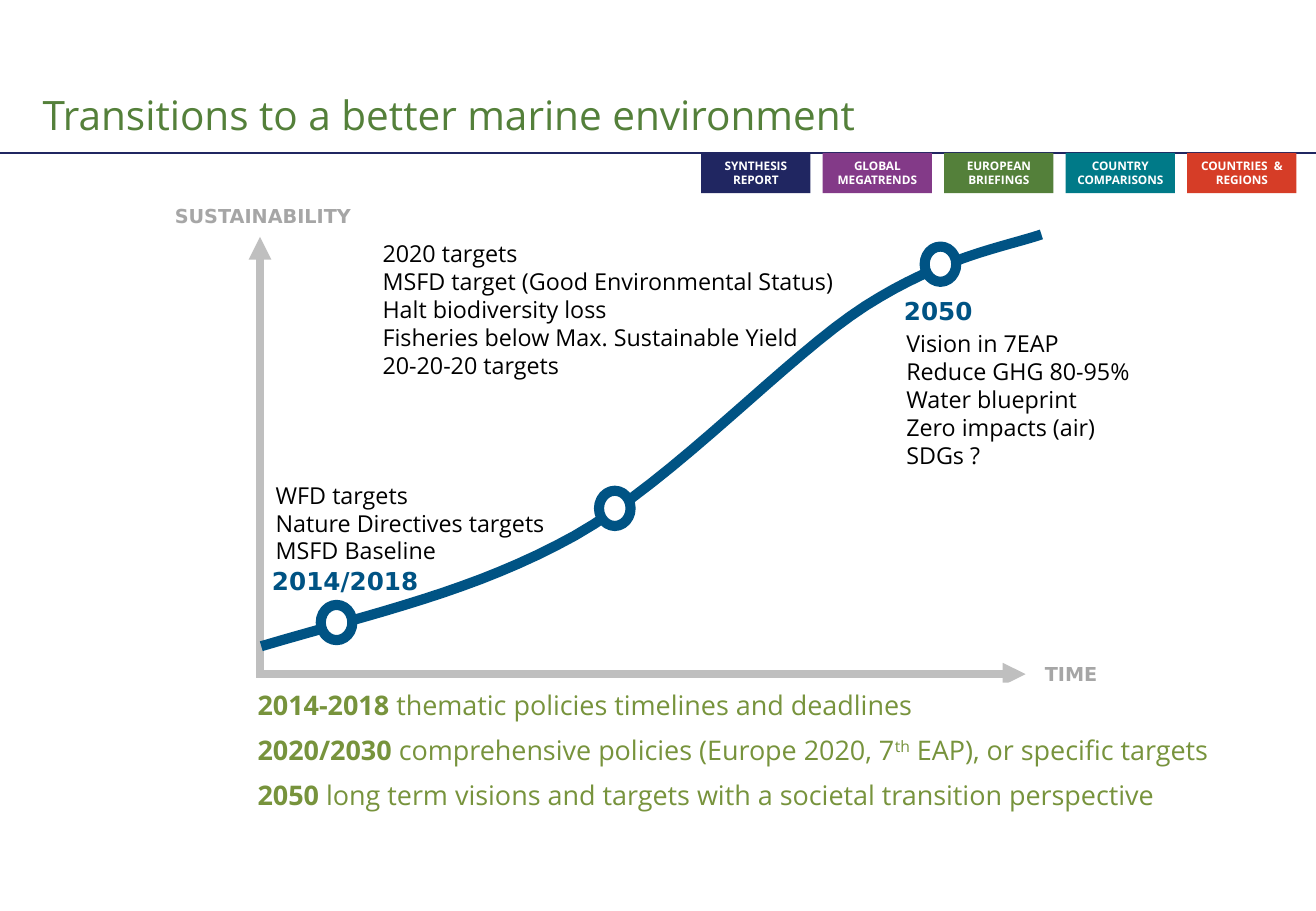
from lxml.etree import SubElement
from pptx import Presentation
from pptx.dml.color import RGBColor
from pptx.enum.shapes import MSO_CONNECTOR as Connector, MSO_SHAPE as Shape
from pptx.enum.text import MSO_ANCHOR as Anchor, PP_ALIGN as Align
from pptx.oxml.ns import qn
from pptx.util import Inches, Pt

GREEN, OLIVE, NAVY, BLUE = "54803A", "77933C", "202661", "005384"
AXIS, LABEL, WHITE, BLACK = "BFBFBF", "A6A6A6", "FFFFFF", "000000"


def color(value):
    """Turn a hex string into a colour."""
    return RGBColor.from_string(value)


class Slide:
    """Hold the style and the current page."""

    sans, label_font = "Open Sans", "DejaVu Sans"

    def __init__(self, deck):
        """Add a title and content page."""
        self.page = deck.slides.add_slide(deck.slide_layouts[1])
        self.shapes = self.page.shapes

    def place(self, box, left, top, width, height):
        """Position a placeholder."""
        box.left, box.top = Inches(left), Inches(top)
        box.width, box.height = Inches(width), Inches(height)

    def style(self, span, size, ink, bold=False, font=sans):
        """Format one run."""
        span.font.name, span.font.size, span.font.bold = font, Pt(size), bold
        span.font.color.rgb = color(ink)

    def title(self, text):
        """Fill the title placeholder."""
        box = self.shapes.title
        self.place(box, 0.25, 0.69, 9.93, 0.5)
        box.text_frame.text = text
        box.text_frame.vertical_anchor = Anchor.BOTTOM
        para = box.text_frame.paragraphs[0]
        para.alignment = Align.LEFT
        self.style(para.runs[0], 24, GREEN)

    def body(self, rows):
        """Fill the body placeholder and bring it to the front."""
        box = self.page.placeholders[1]
        self.place(box, 0.25, 5.62, 10.34, 1.11)
        self.shapes.element.append(box.element)
        box.fill.solid()
        box.fill.fore_color.rgb = color(WHITE)
        frame = box.text_frame
        for index, row in enumerate(rows):
            para = frame.add_paragraph() if index else frame.paragraphs[0]
            para.space_before, para.space_after = Pt(0), Pt(7.3)
            properties = para._p.get_or_add_pPr()
            properties.set("marL", str(Inches(1.77)))
            properties.set("indent", "0")
            SubElement(properties, qn("a:buNone"))
            for position, text in enumerate(row):
                span = para.add_run()
                span.text = text
                self.style(span, 16, OLIVE, bold=position == 0)
                if text == "th":
                    span.font._element.set("baseline", "30000")

    def text(self, left, top, width, height, text, size=13.8, ink=BLACK,
             bold=False, font=sans):
        """Add a text box with one paragraph per line."""
        box = self.shapes.add_textbox(*map(Inches, (left, top, width, height)))
        box.text_frame.word_wrap = True
        box.text_frame.text = text
        for para in box.text_frame.paragraphs:
            self.style(para.runs[0], size, ink, bold, font)

    def label(self, left, top, width, height, text, size, ink):
        """Add a bold label."""
        self.text(left, top, width, height, text, size, ink, True, self.label_font)

    def shape(self, kind, left, top, width, height, fill, ink=None):
        """Add a filled shape, outlined if a line colour is given."""
        shape = self.shapes.add_shape(kind, *map(Inches, (left, top, width, height)))
        shape.shadow.inherit = False
        shape.fill.solid()
        shape.fill.fore_color.rgb = color(fill)
        if ink:
            shape.line.color.rgb, shape.line.width = color(ink), Pt(6)
        else:
            shape.line.fill.background()
        return shape

    def tab(self, left, text, fill):
        """Add a section tab under the header line."""
        frame = self.shape(Shape.RECTANGLE, left, 1.26, 0.9, 0.33, fill).text_frame
        frame.margin_left = frame.margin_right = Inches(0.04)
        frame.margin_top = frame.margin_bottom = Inches(0.04)
        frame.word_wrap, frame.vertical_anchor = True, Anchor.MIDDLE
        frame.text = text
        for para in frame.paragraphs:
            para.alignment = Align.CENTER
            self.style(para.runs[0], 7, WHITE, bold=True)

    def line(self, start, end, ink, width, arrow=False):
        """Add a straight line or arrow."""
        line = self.shapes.add_connector(
            Connector.STRAIGHT, *map(Inches, (*start, *end)))
        line.line.color.rgb, line.line.width = color(ink), Pt(width)
        if arrow:
            SubElement(line.line._get_or_add_ln(), qn("a:tailEnd"), type="triangle")
        SubElement(line._element.spPr, qn("a:effectLst"))

    def curve(self, start, segments, steps=16):
        """Draw cubic segments as one open outline."""
        builder = self.shapes.build_freeform(*map(Inches, start))
        for first, second, end in segments:
            points = []
            for step in range(1, steps + 1):
                t = step / steps
                weights = ((1 - t) ** 3, 3 * t * (1 - t) ** 2, 3 * t * t * (1 - t), t ** 3)
                controls = (start, first, second, end)
                points.append(tuple(
                    Inches(sum(weight * value for weight, value in zip(weights, axis)))
                    for axis in zip(*controls)))
            builder.add_line_segments(points, close=False)
            start = end
        shape = builder.convert_to_shape()
        shape.shadow.inherit = False
        shape.fill.background()
        shape.line.color.rgb, shape.line.width = color(BLUE), Pt(6)


def main():
    """Build the slide."""
    deck = Presentation()
    deck.slide_width, deck.slide_height = Inches(10.83), Inches(7.5)
    slide = Slide(deck)
    slide.line((0, 1.26), (10.83, 1.26), NAVY, 0.75)
    tabs = (("SYNTHESIS\nREPORT", NAVY), ("GLOBAL\nMEGATRENDS", "833A88"),
            ("EUROPEAN\nBRIEFINGS", GREEN), ("COUNTRY COMPARISONS", "007A88"),
            ("COUNTRIES  & REGIONS", "D63D27"))
    for index, (text, fill) in enumerate(tabs):
        slide.tab(5.77 + index, text, fill)
    slide.title("Transitions to a better marine environment")

    slide.label(1.34, 1.63, 2.73, 0.29, "SUSTAINABILITY", 11.4, LABEL)
    slide.label(8.5, 5.4, 0.78, 0.29, "TIME", 11.4, LABEL)
    slide.line((2.14, 5.58), (2.14, 1.95), AXIS, 4.5, arrow=True)
    slide.line((2.12, 5.55), (8.44, 5.55), AXIS, 4.5, arrow=True)
    slide.curve((2.15, 5.32), (
        ((3.1, 5.04), (3.9, 4.87), (4.73, 4.41)),
        ((5.56, 3.94), (6.48, 2.93), (7.12, 2.52)),
        ((7.76, 2.11), (8.28, 2.03), (8.57, 1.93))))

    slide.label(7.34, 2.39, 0.8, 0.35, "2050", 14.6, BLUE)
    slide.label(2.14, 4.61, 1.63, 0.35, "2014/2018", 14.6, BLUE)
    slide.text(2.17, 3.91, 2.75, 0.8,
               "WFD targets\nNature Directives targets\nMSFD Baseline")
    slide.text(3.05, 1.92, 4.47, 1.26,
               "2020 targets\nMSFD target (Good Environmental Status)\n"
               "Halt biodiversity loss\nFisheries below Max. Sustainable Yield\n"
               "20-20-20 targets")
    slide.text(7.36, 2.66, 2.05, 1.5,
               "Vision in 7EAP\nReduce GHG 80-95%\nWater blueprint\n"
               "Zero impacts (air)\nSDGs ?")
    for left, top in ((2.64, 4.98), (4.93, 4.04), (7.61, 2.03)):
        slide.shape(Shape.OVAL, left, top, 0.26, 0.29, WHITE, BLUE)

    slide.body((
        ("2014-2018", " thematic policies timelines and deadlines"),
        ("2020/2030", " comprehensive policies (Europe 2020, 7", "th",
         " EAP), or specific targets"),
        ("2050", " long term visions and targets with a societal transition perspective")))
    deck.save("out.pptx")


if __name__ == "__main__":
    main()
